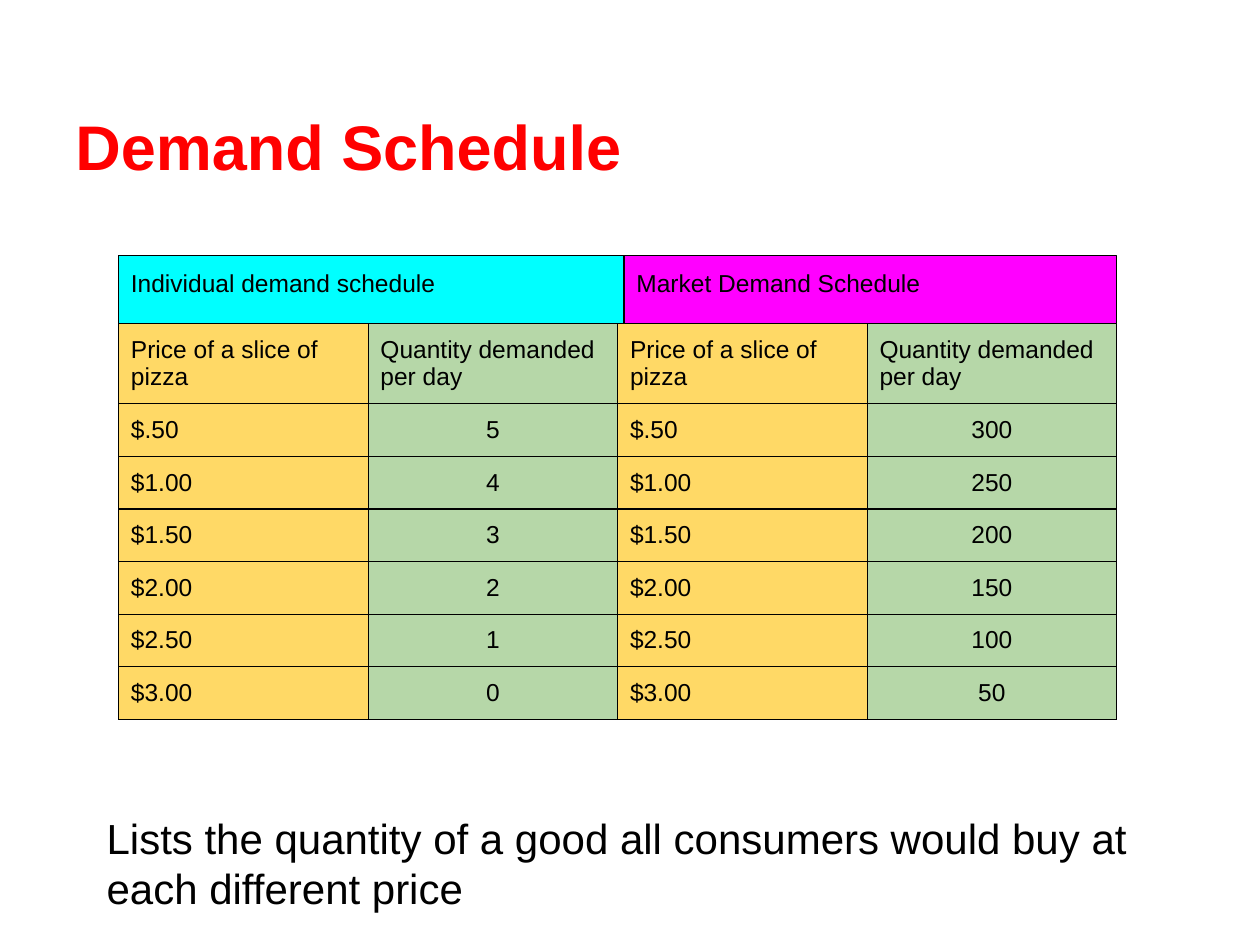
from lxml import etree
from pptx import Presentation
from pptx.dml.color import RGBColor
from pptx.enum import shapes, text
from pptx.oxml import ns
from pptx.util import Cm, Pt

BLACK = "000000"
GOLD = "FFD966"
GREEN = "B6D7A8"
PAD = Cm(0.25)
LEFT = 2.39
HEADS = ["Price of a slice of pizza", "Quantity demanded per day"] * 2
PRICES = ["$.50", "$1.00", "$1.50", "$2.00", "$2.50", "$3.00"]
SINGLE = [5, 4, 3, 2, 1, 0]
MARKET = [300, 250, 200, 150, 100, 50]


def color(code):
    return RGBColor.from_string(code)


def write(frame, words, size, code=BLACK, bold=False, align=text.PP_ALIGN.LEFT):
    frame.text = words
    para = frame.paragraphs[0]
    para.alignment = align
    font = para.runs[0].font
    font.name = "Arial"
    font.size = Pt(size)
    font.bold = bold
    font.color.rgb = color(code)


def setup(frame, anchor=text.MSO_ANCHOR.TOP):
    frame.word_wrap = True
    frame.auto_size = text.MSO_AUTO_SIZE.NONE
    frame.vertical_anchor = anchor
    frame.margin_left = frame.margin_right = PAD
    frame.margin_top = frame.margin_bottom = PAD


def title(slide, words):
    head = slide.shapes.title
    head.left, head.top = Cm(1.27), Cm(0.76)
    head.width, head.height = Cm(22.86), Cm(3.18)
    setup(head.text_frame, text.MSO_ANCHOR.BOTTOM)
    write(head.text_frame, words, 36, "FF0000", True)


def banner(slide, left, width, words, code):
    box = slide.shapes.add_shape(
        shapes.MSO_SHAPE.RECTANGLE, Cm(left), Cm(5.15), Cm(width), Cm(1.37))
    box.shadow.inherit = False
    box.fill.solid()
    box.fill.fore_color.rgb = color(code)
    box.line.color.rgb = color(BLACK)
    box.line.width = Pt(0.75)
    setup(box.text_frame)
    write(box.text_frame, words, 14)


def border(cell):
    props = cell._tc.get_or_add_tcPr()
    for side in ("a:lnL", "a:lnR", "a:lnT", "a:lnB"):
        line = etree.SubElement(props, ns.qn(side), w=str(Pt(0.75)))
        fill = etree.SubElement(line, ns.qn("a:solidFill"))
        etree.SubElement(fill, ns.qn("a:srgbClr"), val=BLACK)


def grid(slide, rows):
    table = slide.shapes.add_table(
        len(rows), 4, Cm(LEFT), Cm(6.52), Cm(20.12), Cm(7.98)).table
    table.first_row = table.horz_banding = False
    for col in table.columns:
        col.width = Cm(5.03)
    for i, row in enumerate(rows):
        table.rows[i].height = Cm(1.06 if i else 1.62)
        for j, words in enumerate(row):
            cell = table.cell(i, j)
            cell.margin_left = cell.margin_right = PAD
            cell.margin_top = cell.margin_bottom = PAD
            border(cell)
            cell.fill.solid()
            cell.fill.fore_color.rgb = color(GREEN if j % 2 else GOLD)
            mid = i and j % 2
            align = text.PP_ALIGN.CENTER if mid else text.PP_ALIGN.LEFT
            write(cell.text_frame, str(words), 14, align=align)


def note(slide, words):
    box = slide.shapes.add_textbox(Cm(1.9), Cm(16.13), Cm(21.59), Cm(2.16))
    setup(box.text_frame)
    write(box.text_frame, words, 24)


def main():
    deck = Presentation()
    deck.slide_width, deck.slide_height = Cm(25.4), Cm(19.05)
    slide = deck.slides.add_slide(deck.slide_layouts[5])
    title(slide, "Demand Schedule")
    rows = [(p, s, p, m) for p, s, m in zip(PRICES, SINGLE, MARKET)]
    grid(slide, [HEADS] + rows)
    banner(slide, LEFT, 10.36, "Individual demand schedule", "00FFFF")
    banner(slide, 12.58, 9.93, "Market Demand Schedule", "FF00FF")
    note(slide, "Lists the quantity of a good all consumers would buy "
                "at each different price")
    deck.save("out.pptx")


if __name__ == "__main__":
    main()
